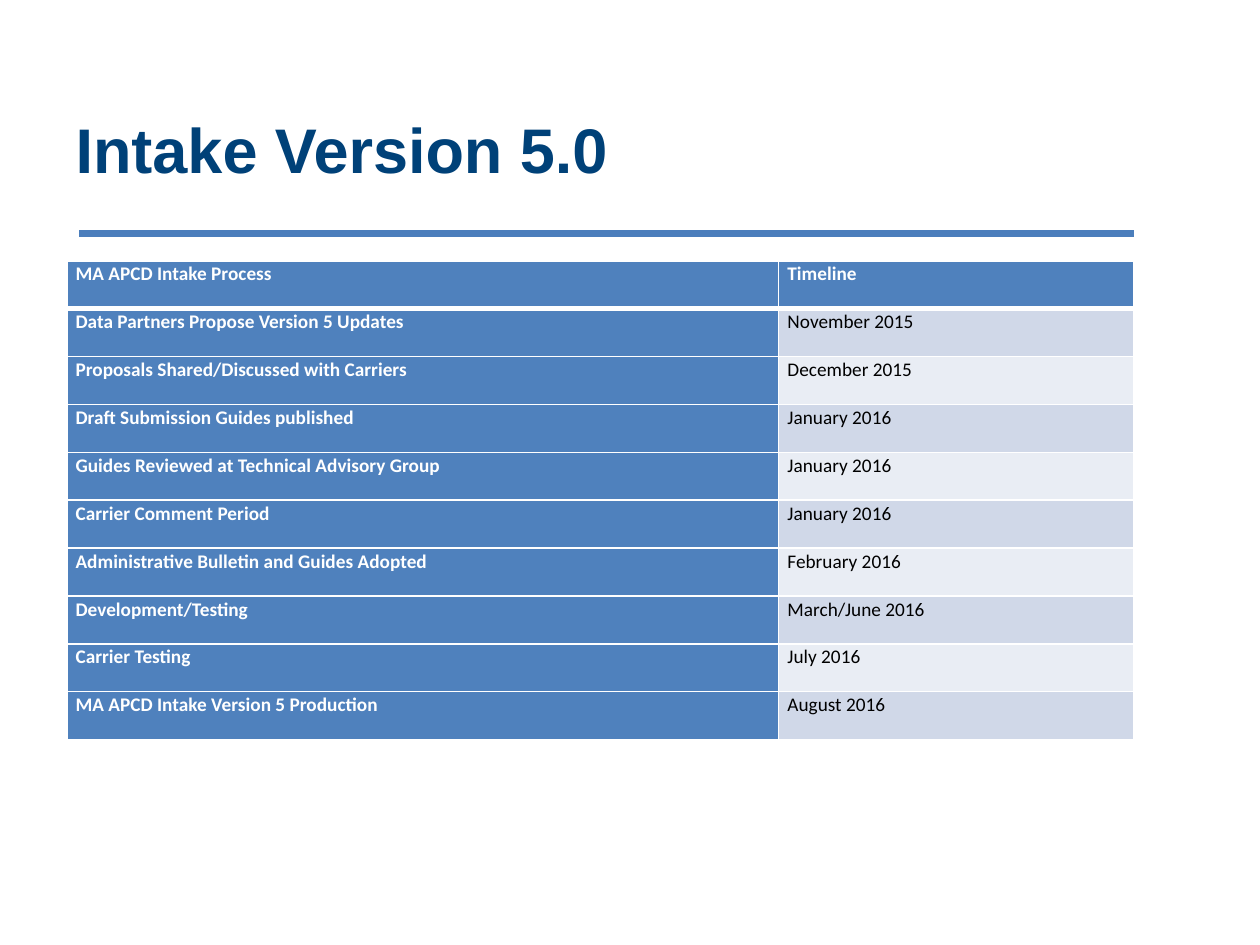
from lxml import etree
from pptx import Presentation
from pptx.dml.color import RGBColor
from pptx.enum.shapes import MSO_CONNECTOR
from pptx.enum.text import MSO_ANCHOR, PP_ALIGN
from pptx.oxml.ns import qn
from pptx.util import Inches, Pt

STRAIGHT = MSO_CONNECTOR.STRAIGHT
MIDDLE, TOP = MSO_ANCHOR.MIDDLE, MSO_ANCHOR.TOP
LEFT = PP_ALIGN.LEFT

COLORS = {
    "title": "004178",
    "rule": "4B7EBC",
    "header": "4F81BD",
    "band_dark": "D0D8E8",
    "band_light": "E9EDF4",
    "white": "FFFFFF",
    "black": "000000",
}

ROWS = [
    ("MA APCD Intake Process", "Timeline"),
    ("Data Partners Propose Version 5 Updates", "November 2015"),
    ("Proposals Shared/Discussed with Carriers", "December 2015"),
    ("Draft Submission Guides published", "January 2016"),
    ("Guides Reviewed at Technical Advisory Group", "January 2016"),
    ("Carrier Comment Period", "January 2016"),
    ("Administrative Bulletin and Guides Adopted", "February 2016"),
    ("Development/Testing", "March/June 2016"),
    ("Carrier Testing", "July 2016"),
    ("MA APCD Intake Version 5 Production", "August 2016"),
]
COL_WIDTHS = (5.65, 2.82)
ROW_HEIGHT = 0.38


def rgb(name):
    return RGBColor.from_string(COLORS[name])


def set_text(tf, text, font="Calibri", size=11, color="black", bold=False,
             spacing=1.0):
    p = tf.paragraphs[0]
    p.alignment = LEFT
    p.line_spacing = spacing
    r = p.add_run()
    r.text = text
    r.font.name = font
    r.font.size = Pt(size)
    r.font.bold = bold
    r.font.color.rgb = rgb(color)


def add_title(s, text):
    sp = s.shapes.title
    sp.left, sp.top = Inches(0.5), Inches(0.62)
    sp.width, sp.height = Inches(8.5), Inches(1.11)
    tf = sp.text_frame
    tf.word_wrap = True
    tf.vertical_anchor = MIDDLE
    set_text(tf, text, font="Arial", size=36, color="title", bold=True)


def add_rule(s, x1, x2, y):
    line = s.shapes.add_connector(STRAIGHT, Inches(x1), Inches(y),
                                  Inches(x2), Inches(y))
    line.line.color.rgb = rgb("rule")
    line.line.width = Pt(4)
    etree.SubElement(line._element.spPr, qn("a:effectLst"))


def set_borders(cell, widths):
    tc_pr = cell._tc.get_or_add_tcPr()
    for i, (side, width) in enumerate(widths.items()):
        ln = etree.Element(qn(f"a:ln{side}"), w=str(Pt(width)))
        fill = etree.SubElement(ln, qn("a:solidFill"))
        etree.SubElement(fill, qn("a:srgbClr"), val=COLORS["white"])
        tc_pr.insert(i, ln)


def format_cell(cell, text, row, col):
    is_header = row == 0 or col == 0
    band = "band_dark" if row % 2 else "band_light"
    cell.fill.solid()
    cell.fill.fore_color.rgb = rgb("header" if is_header else band)
    cell.margin_left = cell.margin_right = Inches(0.07)
    cell.margin_top = cell.margin_bottom = 0
    cell.vertical_anchor = TOP
    set_text(cell.text_frame, text, color="white" if is_header else "black",
             bold=is_header, spacing=1.07)
    set_borders(cell, {"L": 1, "R": 1, "T": 3 if row == 1 else 1,
                       "B": 3 if row == 0 else 1})


def add_timeline(s, x, y):
    table = s.shapes.add_table(
        len(ROWS), len(COL_WIDTHS), Inches(x), Inches(y),
        Inches(sum(COL_WIDTHS)), Inches(ROW_HEIGHT * len(ROWS))).table
    table.first_col = True
    for column, width in zip(table.columns, COL_WIDTHS):
        column.width = Inches(width)
    for i, texts in enumerate(ROWS):
        table.rows[i].height = Inches(ROW_HEIGHT)
        for j, text in enumerate(texts):
            format_cell(table.cell(i, j), text, i, j)


def main():
    prs = Presentation()
    prs.slide_width, prs.slide_height = Inches(10), Inches(7.5)
    s = prs.slides.add_slide(prs.slide_layouts[5])
    add_title(s, "Intake Version 5.0")
    add_rule(s, 0.63, 9, 1.85)
    add_timeline(s, 0.53, 2.07)
    prs.save("out.pptx")


if __name__ == "__main__":
    main()
